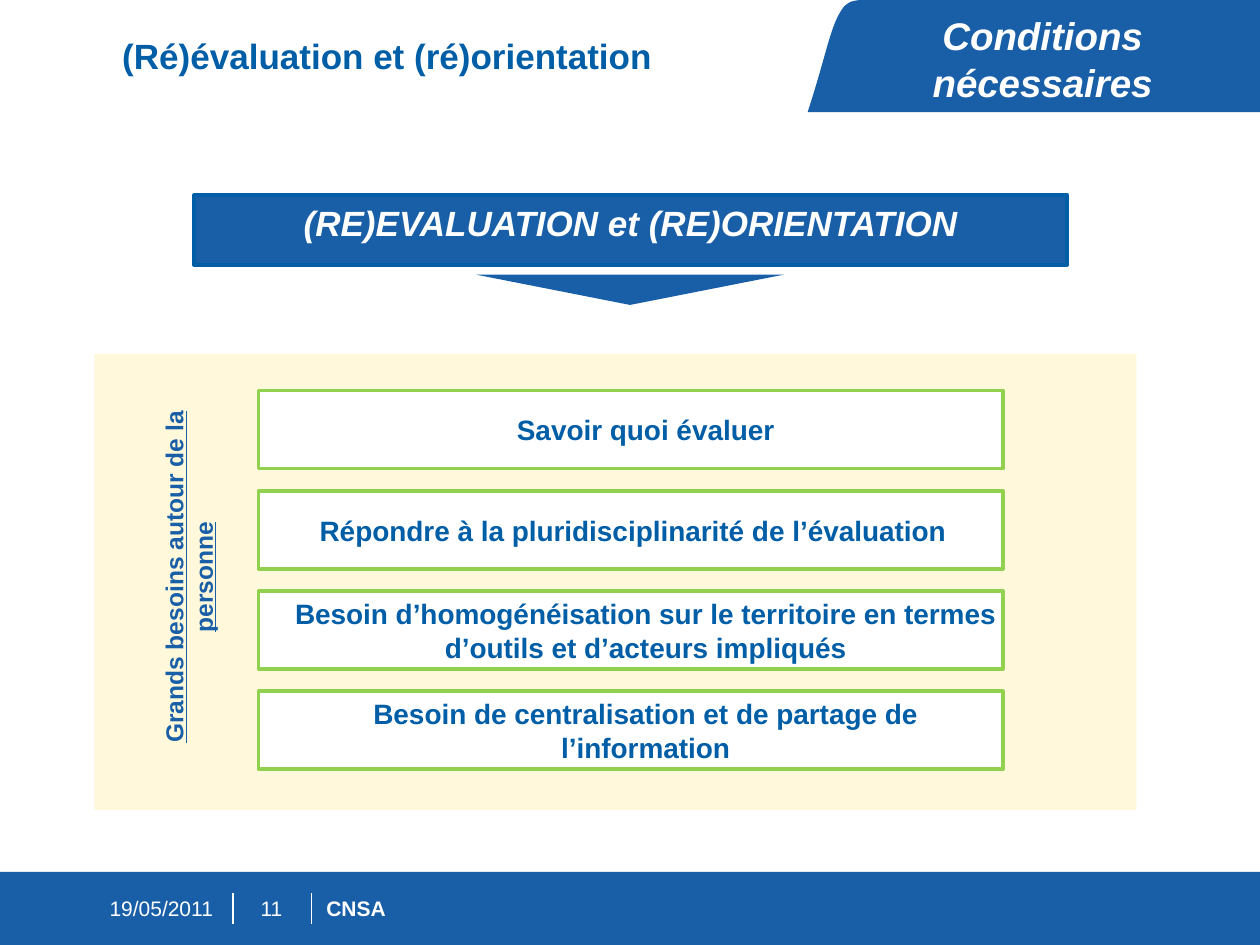
import pptx
import pptx.util
import pptx.dml.color
import pptx.enum.shapes
import pptx.enum.text
import pptx.oxml.ns
import lxml.etree

COLORS = {
    "band": "195FA7",
    "text": "005EA7",
    "panel": "FFEB99",
    "need": "92D050",
    "white": "FFFFFF",
}
COLUMNS, ROWS = 100, 75
SHAPES = pptx.enum.shapes.MSO_SHAPE
ALIGN = pptx.enum.text.PP_ALIGN
ANCHOR = pptx.enum.text.MSO_ANCHOR
NEEDS = [
    "\tSavoir quoi évaluer",
    "Répondre à la pluridisciplinarité de l’évaluation",
    "\tBesoin d’homogénéisation sur le territoire en termes d’outils et d’acteurs impliqués",
    "\tBesoin de centralisation et de partage de l’information",
]


def rgb(name):
    return pptx.dml.color.RGBColor.from_string(COLORS[name])


def write(shape, text, size=16, color="text", bold=True, italic=False, underline=False,
          align=ALIGN.CENTER, anchor=ANCHOR.MIDDLE, insets=(0, 0, 0, 0),
          spacing=None, hanging=None, vert=None):
    frame = shape.text_frame
    frame.word_wrap = True
    frame.auto_size = pptx.enum.text.MSO_AUTO_SIZE.NONE
    frame.vertical_anchor = anchor
    (frame.margin_left, frame.margin_top,
     frame.margin_right, frame.margin_bottom) = map(pptx.util.Inches, insets)
    if vert:
        frame._txBody.bodyPr.set("vert", vert)
    paragraph = frame.paragraphs[0]
    paragraph.alignment = align
    if spacing:
        paragraph.line_spacing = spacing
    if hanging:
        indent = pptx.util.Inches(hanging)
        properties = paragraph._p.get_or_add_pPr()
        properties.set("marL", str(indent))
        properties.set("indent", str(-indent))
    run = paragraph.add_run()
    run.text = text
    font = run.font
    font.name, font.size = "Arial", pptx.util.Pt(size)
    font.bold, font.italic, font.underline = bold, italic, underline
    font.color.rgb = rgb(color)


def bezier(start, first, second, end, steps=12):
    for step in range(1, steps + 1):
        t = step / steps
        yield tuple((1 - t) ** 3 * a + 3 * t * (1 - t) ** 2 * b + 3 * t * t * (1 - t) * c + t ** 3 * d
                    for a, b, c, d in zip(start, first, second, end))


class Page:
    def __init__(self, deck):
        self.column = deck.slide_width / COLUMNS
        self.row = deck.slide_height / ROWS
        self.slide = deck.slides.add_slide(deck.slide_layouts[5])

    def place(self, left, top, width, height):
        return (round(left * self.column), round(top * self.row),
                round(width * self.column), round(height * self.row))

    def paint(self, shape, fill, line=None, weight=2, alpha=None):
        shape.shadow.inherit = False
        shape.fill.solid()
        shape.fill.fore_color.rgb = rgb(fill)
        if alpha:
            color = shape._element.spPr.find(".//" + pptx.oxml.ns.qn("a:srgbClr"))
            lxml.etree.SubElement(color, pptx.oxml.ns.qn("a:alpha")).set("val", str(alpha * 1000))
        if line:
            shape.line.color.rgb = rgb(line)
            shape.line.width = pptx.util.Pt(weight)
        else:
            shape.line.fill.background()
        return shape

    def title(self, box, text, **style):
        heading = self.slide.shapes.title
        heading.left, heading.top, heading.width, heading.height = self.place(*box)
        write(heading, text, **style)

    def shape(self, box, fill, kind=SHAPES.RECTANGLE, **look):
        return self.paint(self.slide.shapes.add_shape(kind, *self.place(*box)), fill, **look)

    def label(self, box, text, **style):
        write(self.slide.shapes.add_textbox(*self.place(*box)), text, **style)

    def divider(self, column, top, bottom):
        x, y, _, height = self.place(column, top, 0, bottom - top)
        line = self.slide.shapes.add_connector(
            pptx.enum.shapes.MSO_CONNECTOR.STRAIGHT, x, y, x, y + height)
        line.line.color.rgb = rgb("white")
        line.line.width = pptx.util.Pt(0.75)
        lxml.etree.SubElement(line._element.spPr, pptx.oxml.ns.qn("a:effectLst"))

    def outline(self, points, fill):
        spots = [(x * self.column, y * self.row) for x, y in points]
        builder = self.slide.shapes.build_freeform(*map(round, spots[0]))
        builder.add_line_segments([tuple(map(round, spot)) for spot in spots[1:]], close=True)
        return self.paint(builder.convert_to_shape(), fill)


def main():
    deck = pptx.Presentation()
    deck.slide_width, deck.slide_height = pptx.util.Inches(10), pptx.util.Inches(7.5)
    page = Page(deck)
    padding = (0.1, 0.05, 0.1, 0.05)
    wide = (0.16,) * 4

    page.outline([(100, 0), (68.6, 0),
                  *bezier((68.6, 0), (67.4, 0), (67.3, 0.3), (67, 0.5)),
                  *bezier((67, 0.5), (65.9, 1.9), (65.7, 4), (64.1, 8.9)),
                  (100, 8.9)], "band")
    page.label((68.2, 0.5, 29.1, 3.9), "Conditions nécessaires", size=22, color="white",
               italic=True, anchor=ANCHOR.TOP, insets=padding)
    page.title((8.7, 2.5, 54.3, 3.9), "(Ré)évaluation et (ré)orientation", size=20,
               align=ALIGN.LEFT, anchor=ANCHOR.TOP, insets=padding, spacing=0.95)

    page.shape((0, 69.2, 100, 5.8), "band")
    for column in (18.5, 24.7):
        page.divider(column, 70.9, 73.3)
    footer = [
        (8.7, 8.7, "19/05/2011", False, ALIGN.LEFT),
        (19.6, 3.9, "11", False, ALIGN.CENTER),
        (25.9, 43.8, "CNSA", True, ALIGN.LEFT),
    ]
    for left, width, text, bold, align in footer:
        page.label((left, 70.7, width, 2.7), text, size=12, color="white", bold=bold, align=align)

    page.shape((7.5, 28.1, 82.7, 36.2), "panel", alpha=35)
    banner = page.shape((15.4, 15.5, 69.3, 5.5), "band", line="text", weight=2.25)
    write(banner, "(RE)EVALUATION et (RE)ORIENTATION", size=20, color="white", italic=True,
          insets=wide, spacing=pptx.util.Pt(16))
    pointer = page.shape((37.8, 21.8, 24.4, 2.4), "band", kind=SHAPES.ISOSCELES_TRIANGLE)
    pointer.rotation = 180

    for index, need in enumerate(NEEDS):
        card = page.shape((20.5, 31 + 7.95 * index, 59.1, 6.2), "white", line="need")
        write(card, need, insets=(0.08, 0, 0.04, 0), hanging=0.2)
    page.label((11.4, 27.3, 7.1, 37), "Grands besoins autour de la personne", size=14,
               color="band", underline=True, insets=wide, vert="vert270")

    deck.save("out.pptx")


if __name__ == "__main__":
    main()
